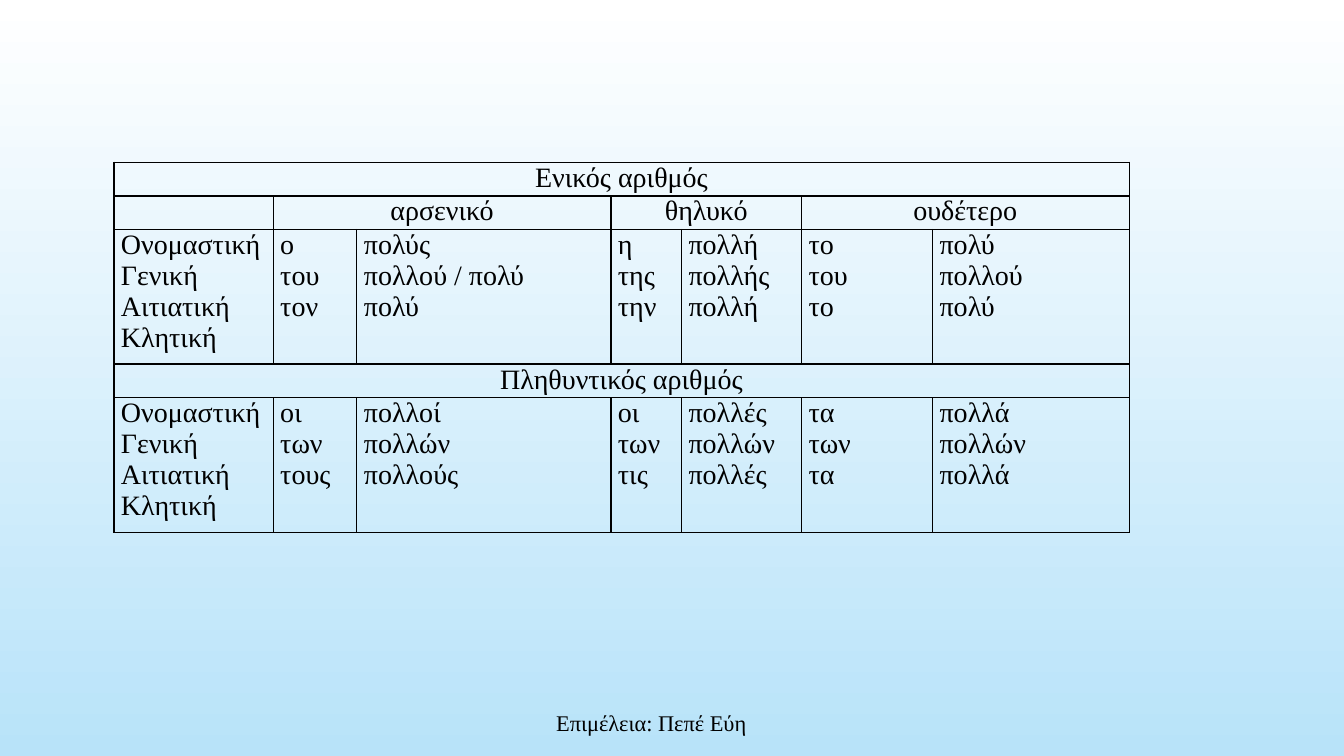
"""Builds the slide that declines the adjective πολύς in both numbers."""
from dataclasses import dataclass

from lxml import etree
from pptx import Presentation
from pptx.dml.color import RGBColor
from pptx.enum import text
from pptx.oxml import ns
from pptx.util import Inches, Pt

CASES = ["Ονομαστική", "Γενική", "Αιτιατική", "Κλητική"]
GENDERS = ["αρσενικό", "θηλυκό", "ουδέτερο"]
SINGULAR = [
    ["ο", "του", "τον"], ["πολύς", "πολλού / πολύ", "πολύ"],
    ["η", "της", "την"], ["πολλή", "πολλής", "πολλή"],
    ["το", "του", "το"], ["πολύ", "πολλού", "πολύ"],
]
PLURAL = [
    ["οι", "των", "τους"], ["πολλοί", "πολλών", "πολλούς"],
    ["οι", "των", "τις"], ["πολλές", "πολλών", "πολλές"],
    ["τα", "των", "τα"], ["πολλά", "πολλών", "πολλά"],
]
GENDER_ROW = [[]] + [entry for gender in GENDERS for entry in ([gender], [])]
ROWS = [
    [["Ενικός αριθμός"]] + [[]] * 6,
    GENDER_ROW,
    [CASES] + SINGULAR,
    [["Πληθυντικός αριθμός"]] + [[]] * 6,
    [CASES] + PLURAL,
]
HEADING_ROWS = (0, 1, 3)
SPANS = [(0, 0, 6), (3, 0, 6)] + [(1, first, first + 1) for first in (1, 3, 5)]
CREDIT = "Επιμέλεια: Πεπέ Εύη"

COLUMN_WIDTHS = [1.58, 0.83, 2.52, 0.7, 1.19, 1.3, 1.95]
HEADING_HEIGHT, FORMS_HEIGHT = 0.33, 1.23
TABLE_LEFT, TABLE_TOP = 1.13, 1.61


@dataclass(frozen=True)
class Theme:
    """Colours, font and type sizes of the slide."""
    font: str = "Times New Roman"
    ink: str = "000000"
    sky: tuple = ("FFFFFF", "B8E3F9")
    table_size: int = 20
    credit_size: int = 16
    border: float = 1


THEME = Theme()


def write(frame, lines, size, align):
    """Fills a text frame with one paragraph per line."""
    frame.text = "\n".join(lines)
    for paragraph in frame.paragraphs:
        paragraph.alignment = align
        for run in paragraph.runs:
            run.font.name = THEME.font
            run.font.size = Pt(size)
            run.font.color.rgb = RGBColor.from_string(THEME.ink)


def add_borders(cell):
    """Draws a solid line on all four sides of a cell."""
    properties = cell._tc.get_or_add_tcPr()
    for position, side in enumerate(("lnL", "lnR", "lnT", "lnB")):
        line = etree.Element(ns.qn(f"a:{side}"), w=str(Pt(THEME.border)))
        fill = etree.SubElement(line, ns.qn("a:solidFill"))
        etree.SubElement(fill, ns.qn("a:srgbClr"), val=THEME.ink)
        properties.insert(position, line)


def add_declension(slide):
    """Adds the table of cases, genders and numbers."""
    heights = [HEADING_HEIGHT if row in HEADING_ROWS else FORMS_HEIGHT
               for row in range(len(ROWS))]
    declension = slide.shapes.add_table(
        len(ROWS), len(COLUMN_WIDTHS), Inches(TABLE_LEFT), Inches(TABLE_TOP),
        Inches(sum(COLUMN_WIDTHS)), Inches(sum(heights))).table
    declension.first_row = declension.horz_banding = False
    for column, width in zip(declension.columns, COLUMN_WIDTHS):
        column.width = Inches(width)
    for row, height in zip(declension.rows, heights):
        row.height = Inches(height)
    for row, first, last in SPANS:
        declension.cell(row, first).merge(declension.cell(row, last))
    for row, entries in enumerate(ROWS):
        align = text.PP_ALIGN.CENTER if row in HEADING_ROWS else text.PP_ALIGN.LEFT
        for column, lines in enumerate(entries):
            cell = declension.cell(row, column)
            cell.margin_left = cell.margin_right = Inches(0.07)
            cell.margin_top = cell.margin_bottom = 0
            cell.fill.background()
            write(cell.text_frame, lines, THEME.table_size, align)
            add_borders(cell)


def add_credit(slide):
    """Adds the editor's name at the foot of the slide."""
    credit = slide.shapes.add_textbox(
        Inches(2.81), Inches(6.97), Inches(7.3), Inches(0.4)).text_frame
    credit.word_wrap = True
    credit.vertical_anchor = text.MSO_ANCHOR.MIDDLE
    write(credit, [CREDIT], THEME.credit_size, text.PP_ALIGN.CENTER)


def main():
    """Builds and saves the slide."""
    deck = Presentation()
    deck.slide_width, deck.slide_height = Inches(13.33), Inches(7.5)
    slide = deck.slides.add_slide(deck.slide_layouts[6])
    sky = slide.background.fill
    sky.gradient()
    sky.gradient_angle = 270
    for stop, position, colour in zip(sky.gradient_stops, (0, 1), THEME.sky):
        stop.position = position
        stop.color.rgb = RGBColor.from_string(colour)
    add_credit(slide)
    add_declension(slide)
    deck.save("out.pptx")


if __name__ == "__main__":
    main()
